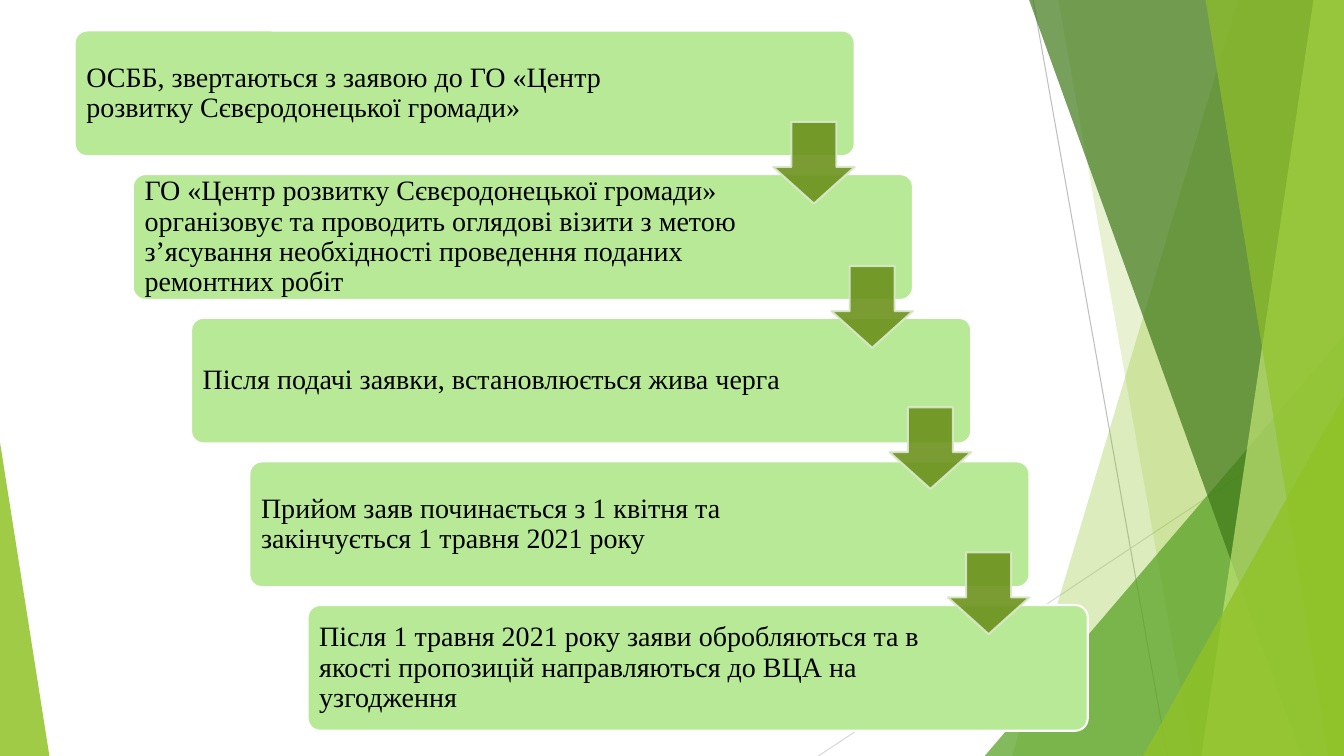
from dataclasses import dataclass

from lxml.etree import SubElement
from pptx import Presentation
from pptx.dml.color import RGBColor
from pptx.enum.shapes import MSO_CONNECTOR, MSO_SHAPE
from pptx.enum.text import MSO_ANCHOR
from pptx.oxml.ns import qn
from pptx.util import Pt


@dataclass(frozen=True)
class Theme:
    lime: str = "90C226"
    leaf: str = "54A021"
    pine: str = "3F7819"
    pale: str = "C0E474"
    box: str = "B7E996"
    edge: str = "FFFFFF"
    arrow: str = "6C921D"
    rim: str = "DBE9CD"
    ray: str = "BFBFBF"
    mist: str = "D9D9D9"
    ink: str = "000000"
    font: str = "Times New Roman"
    size: int = 20


THEME = Theme()
WIDE, HIGH = 960, 540
STEP_X, STEP_Y = 41.6, 102.6
STEPS = [
    "ОСББ, звертаються з заявою до ГО «Центр розвитку Сєвєродонецької громади»",
    "ГО «Центр розвитку Сєвєродонецької громади» організовує та проводить "
    "оглядові візити з метою з’ясування необхідності проведення поданих ремонтних робіт",
    "Після подачі заявки, встановлюється жива черга",
    "Прийом заяв починається з 1 квітня та закінчується 1 травня 2021 року",
    "Після 1 травня 2021 року заяви обробляються та в якості пропозицій "
    "направляються до ВЦА на узгодження",
]
ARROW_TOPS = [87.1, 190.1, 290.9, 394.6]


def paint(fill, color, alpha=100):
    fill.solid()
    fill.fore_color.rgb = RGBColor.from_string(color)
    if alpha < 100:
        tone = fill._xPr.find(qn("a:solidFill"))[0]
        SubElement(tone, qn("a:alpha")).set("val", str(alpha * 1000))


def style(shape, color, alpha=100, rim=None):
    shape.shadow.inherit = False
    paint(shape.fill, color, alpha)
    if rim:
        paint(shape.line.fill, rim, alpha)
        shape.line.width = Pt(1.5)
    else:
        shape.line.fill.background()


def add_form(slide, kind, area, adjust, color, alpha=100, rim=None):
    shape = slide.shapes.add_shape(kind, *map(Pt, area))
    for i, value in enumerate(adjust):
        shape.adjustments[i] = value
    style(shape, color, alpha, rim)


def add_band(slide, top, base, color, alpha):
    pen = slide.shapes.build_freeform(Pt(top), 0)
    edge = [(WIDE, 0), (WIDE, HIGH), (base, HIGH)]
    pen.add_line_segments([(Pt(x), Pt(y)) for x, y in edge], close=True)
    style(pen.convert_to_shape(), color, alpha)


def add_ray(slide, ends, color):
    ray = slide.shapes.add_connector(MSO_CONNECTOR.STRAIGHT, *map(Pt, ends))
    paint(ray.line.fill, color)
    ray.line.width = Pt(0.75)
    SubElement(ray._element.spPr, qn("a:effectLst"))


def add_text(slide, text, area, *, size=THEME.size, color=THEME.ink, inset=5.76):
    frame = slide.shapes.add_textbox(*map(Pt, area)).text_frame
    frame.word_wrap = True
    frame.vertical_anchor = MSO_ANCHOR.MIDDLE
    frame.margin_left = frame.margin_right = Pt(inset)
    frame.margin_top = frame.margin_bottom = Pt(inset)
    para = frame.paragraphs[0]
    para.line_spacing = 0.9
    para.space_after = Pt(0.35 * size)
    run = para.add_run()
    run.text = text
    run.font.name = THEME.font
    run.font.size = Pt(size)
    run.font.color.rgb = RGBColor.from_string(color)


def add_decor(slide):
    wedge = MSO_SHAPE.ISOSCELES_TRIANGLE
    add_ray(slide, (738, 0, 833.8, HIGH), THEME.ray)
    add_ray(slide, (WIDE, 290.2, 584.6, HIGH), THEME.mist)
    add_band(slide, 884.2, 722.9, THEME.lime, 30)
    add_band(slide, 756, 851.8, THEME.lime, 20)
    add_form(slide, wedge, (703.4, 239.8, 256.6, 300.2), [1], THEME.leaf, 72)
    add_band(slide, 735.1, 929.5, THEME.pine, 70)
    add_band(slide, 938.2, 858.2, THEME.pale, 70)
    add_band(slide, 861.1, 949, THEME.lime, 65)
    add_form(slide, wedge, (816.5, 283, 143.5, 257), [1], THEME.lime, 80)
    add_form(slide, wedge, (0, 316, 35.3, 224), [0], THEME.lime, 85)


def add_steps(slide):
    for i, text in enumerate(STEPS):
        left, top = 53.3 + i * STEP_X, 21.8 + i * STEP_Y
        add_form(slide, MSO_SHAPE.ROUNDED_RECTANGLE, (left, top, 557.3, 89.8),
                 [0.1], THEME.box, rim=THEME.edge)
        add_text(slide, text, (left + 2.6, top + 2.6, 451, 84.6))
    for i, top in enumerate(ARROW_TOPS):
        add_form(slide, MSO_SHAPE.DOWN_ARROW, (552.2 + i * STEP_X, top, 58.4, 58.4),
                 [0.55, 0.45], THEME.arrow, 90, THEME.rim)


def main():
    deck = Presentation()
    deck.slide_width, deck.slide_height = Pt(WIDE), Pt(HIGH)
    slide = deck.slides.add_slide(deck.slide_layouts[6])
    add_decor(slide)
    add_steps(slide)
    deck.save("out.pptx")


if __name__ == "__main__":
    main()
